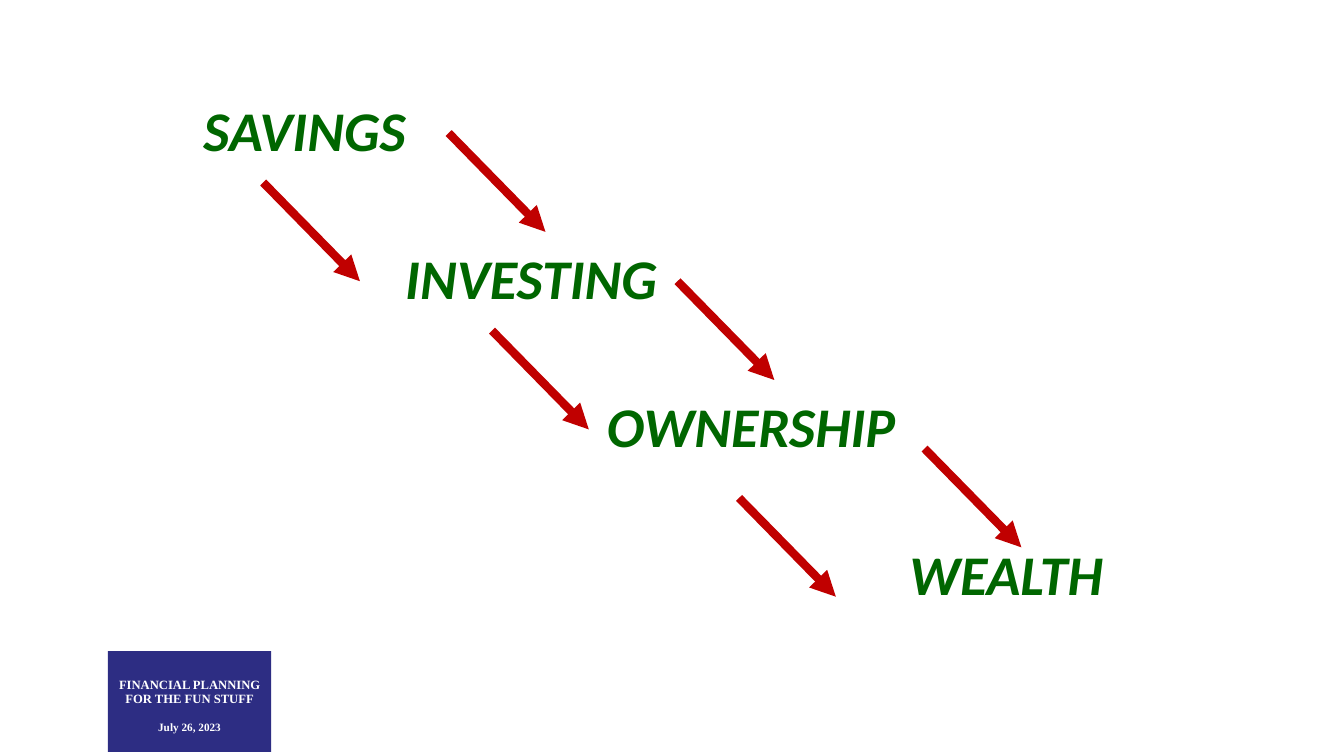
from lxml.etree import SubElement
from pptx import Presentation
from pptx.dml.color import RGBColor
from pptx.enum.shapes import MSO_CONNECTOR, MSO_SHAPE
from pptx.enum.text import MSO_ANCHOR, PP_ALIGN
from pptx.oxml.ns import qn
from pptx.util import Inches, Pt

GREEN = "006600"
RED = "C00000"
NAVY = "2D2D83"
WHITE = "FFFFFF"

STEPS = [("SAVINGS", 1), ("INVESTING", 3), ("OWNERSHIP", 5), ("WEALTH", 8)]
STEP_GAP = 62.5
ARROW_STARTS = [(2.61, 1.81), (4.88, 3.28), (7.33, 4.94)]
ARROW_RUN, ARROW_DROP = 0.96, 0.98
UPPER_SHIFT, UPPER_RISE = 1.84, 0.49


def color(value):
    """Return the colour for a hex string."""
    return RGBColor.from_string(value)


def add_span(para, text, font, size, fill, italic=False):
    """Add one bold run to a paragraph."""
    span = para.add_run()
    span.text = text
    span.font.name = font
    span.font.size = Pt(size)
    span.font.bold = True
    span.font.italic = italic
    span.font.color.rgb = color(fill)


def next_para(frame, index, gap):
    """Return the paragraph at index, spaced from the one before it."""
    para = frame.add_paragraph() if index else frame.paragraphs[0]
    para.line_spacing = 0.9
    para.space_before = Pt(gap if index else 0)
    return para


def add_steps(page):
    """Add the staircase of words, each indented by whole inches."""
    box = page.shapes.add_textbox(Inches(0.92), Inches(0.97), Inches(11.5), Inches(5.3))
    frame = box.text_frame
    frame.word_wrap = True
    for index, (word, indent) in enumerate(STEPS):
        para = next_para(frame, index, STEP_GAP)
        properties = para._p.get_or_add_pPr()
        properties.set("marL", str(Inches(indent)))
        properties.set("indent", "0")
        add_span(para, word, "Calibri", 40, GREEN, italic=True)


def add_arrow(page, left, top):
    """Add one red arrow pointing down to the right."""
    arrow = page.shapes.add_connector(
        MSO_CONNECTOR.STRAIGHT, Inches(left), Inches(top),
        Inches(left + ARROW_RUN), Inches(top + ARROW_DROP))
    arrow.line.color.rgb = color(RED)
    arrow.line.width = Pt(6)
    SubElement(arrow.line._get_or_add_ln(), qn("a:tailEnd"), type="triangle")
    SubElement(arrow._element.spPr, qn("a:effectLst"))


def add_badge(page):
    """Add the navy box with the talk's name and date."""
    badge = page.shapes.add_shape(
        MSO_SHAPE.RECTANGLE, Inches(1.07), Inches(6.46), Inches(1.62), Inches(1))
    badge.shadow.inherit = False
    badge.fill.solid()
    badge.fill.fore_color.rgb = color(NAVY)
    badge.line.fill.background()
    frame = badge.text_frame
    frame.word_wrap = True
    frame.vertical_anchor = MSO_ANCHOR.MIDDLE
    frame.margin_top = Inches(0.15)
    lines = [("FINANCIAL PLANNING FOR THE FUN STUFF", 9), ("July 26, 2023", 8)]
    for index, (text, size) in enumerate(lines):
        para = next_para(frame, index, 11.5)
        para.alignment = PP_ALIGN.CENTER
        add_span(para, text, "Times New Roman", size, WHITE)


def main():
    """Build the slide and save the deck."""
    deck = Presentation()
    deck.slide_width = Inches(13.33)
    deck.slide_height = Inches(7.5)
    page = deck.slides.add_slide(deck.slide_layouts[6])
    add_badge(page)
    add_steps(page)
    for left, top in ARROW_STARTS:
        add_arrow(page, left, top)
        add_arrow(page, left + UPPER_SHIFT, top - UPPER_RISE)
    deck.save("out.pptx")


if __name__ == "__main__":
    main()
